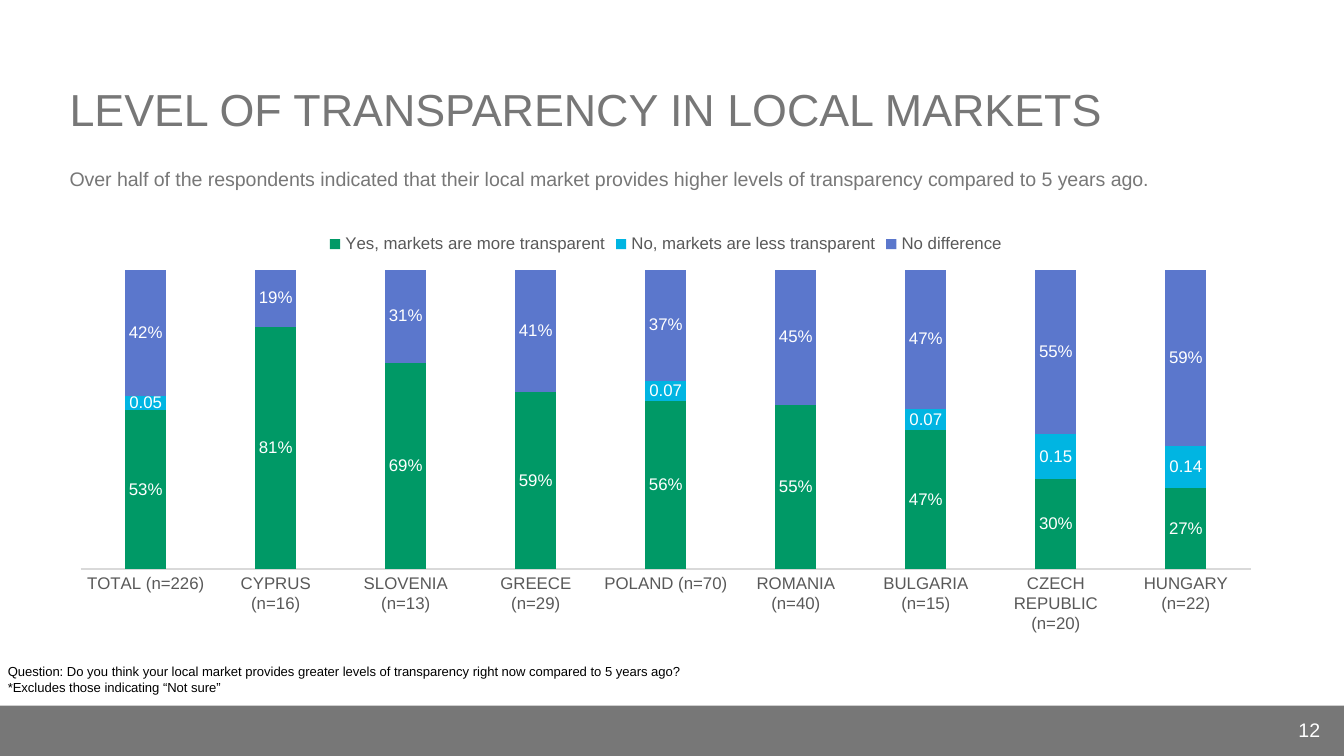
from lxml import etree
from pptx import Presentation
from pptx import util as u
from pptx.chart.data import CategoryChartData
from pptx.dml.color import RGBColor
from pptx.enum import chart as ch, shapes, text
from pptx.oxml.ns import qn

Pt = u.Pt
FONT = "Arial"
COLORS = {"gray": "777777", "white": "FFFFFF", "black": "000000", "label": "595959",
          "axis": "D9D9D9", "green": "009966", "cyan": "00B5E2", "blue": "5B77CC"}

TITLE = "LEVEL OF TRANSPARENCY IN LOCAL MARKETS"
FINDING = ("Over half of the respondents indicated that their local market provides "
           "higher levels of transparency compared to 5 years ago.")
NOTES = ["Question: Do you think your local market provides greater levels of "
         "transparency right now compared to 5 years ago?",
         "*Excludes those indicating “Not sure”"]
PAGE = "12"
MARKETS = ["TOTAL (n=226)", "CYPRUS (n=16)", "SLOVENIA (n=13)", "GREECE (n=29)",
           "POLAND (n=70)", "ROMANIA (n=40)", "BULGARIA (n=15)",
           "CZECH REPUBLIC (n=20)", "HUNGARY (n=22)"]
# name, color, label format, values
ANSWERS = [
    ("Yes, markets are more transparent", "green", "0%",
     [0.53, 0.81, 0.69, 0.59, 0.56, 0.55, 0.47, 0.3, 0.27]),
    ("No, markets are less transparent", "cyan", "General",
     [0.05, None, None, None, 0.07, None, 0.07, 0.15, 0.14]),
    ("No difference", "blue", "0%",
     [0.42, 0.19, 0.31, 0.41, 0.37, 0.45, 0.47, 0.55, 0.59]),
]
PLOT_LAYOUT = {"x": 0.02, "y": 0.12, "w": 0.96, "h": 0.71}  # fractions of the chart

SLIDE_W, SLIDE_H = 720, 405
BAR_H = 27
LEFT = 30.2


def rgb(name):
    return RGBColor.from_string(COLORS[name])


def set_font(font, size, color):
    font.name, font.size = FONT, Pt(size)
    font.color.rgb = rgb(color)


def add_text(slide, lines, box, size, color, anchor=text.MSO_ANCHOR.TOP,
             align=text.PP_ALIGN.LEFT):
    tf = slide.shapes.add_textbox(*map(Pt, box)).text_frame
    tf.word_wrap = True
    tf.vertical_anchor = anchor
    tf.text = "\n".join(lines)
    for p in tf.paragraphs:
        p.alignment = align
        for r in p.runs:
            set_font(r.font, size, color)


def fix_plot_layout(chart, fractions):
    """Pin the inner plot area to the given fractions of the chart."""
    area = chart._chartSpace.chart.plotArea
    for old in area.findall(qn("c:layout")):
        area.remove(old)
    layout = etree.Element(qn("c:layout"))
    manual = etree.SubElement(layout, qn("c:manualLayout"))
    settings = {"layoutTarget": "inner", "xMode": "edge", "yMode": "edge", **fractions}
    for tag, val in settings.items():
        etree.SubElement(manual, qn(f"c:{tag}")).set("val", str(val))
    area.insert(0, layout)


def add_answer_chart(slide, box):
    data = CategoryChartData()
    data.categories = MARKETS
    for name, _, fmt, values in ANSWERS:
        data.add_series(name, values, number_format=fmt)
    chart = slide.shapes.add_chart(ch.XL_CHART_TYPE.COLUMN_STACKED_100,
                                   *map(Pt, box), data).chart
    set_font(chart.font, 10, "black")
    chart.has_title = False
    chart.has_legend = True
    chart.legend.position = ch.XL_LEGEND_POSITION.TOP
    chart.legend.include_in_layout = False
    set_font(chart.legend.font, 9, "label")

    axis = chart.category_axis
    axis.major_tick_mark = axis.minor_tick_mark = ch.XL_TICK_MARK.NONE
    axis.format.line.color.rgb = rgb("axis")
    axis.format.line.width = Pt(0.75)
    set_font(axis.tick_labels.font, 9, "label")
    chart.value_axis.has_major_gridlines = False
    chart.value_axis.visible = False

    plot = chart.plots[0]
    plot.gap_width, plot.overlap = 219, 100
    plot.vary_by_categories = False
    for series, (_, color, fmt, _) in zip(plot.series, ANSWERS):
        series.format.fill.solid()
        series.format.fill.fore_color.rgb = rgb(color)
        labels = series.data_labels
        labels.show_value = True
        labels.number_format, labels.number_format_is_linked = fmt, False
        set_font(labels.font, 9, "white")
    fix_plot_layout(chart, PLOT_LAYOUT)


def main():
    prs = Presentation()
    prs.slide_width, prs.slide_height = Pt(SLIDE_W), Pt(SLIDE_H)
    s = prs.slides.add_slide(prs.slide_layouts[6])

    bar = s.shapes.add_shape(shapes.MSO_SHAPE.RECTANGLE, 0, Pt(SLIDE_H - BAR_H),
                             Pt(SLIDE_W), Pt(BAR_H))
    bar.shadow.inherit = False
    bar.fill.solid()
    bar.fill.fore_color.rgb = rgb("gray")
    bar.line.fill.background()

    add_text(s, [TITLE], (LEFT, 8.6, 659.6, 67.7), 24, "gray",
             anchor=text.MSO_ANCHOR.BOTTOM)
    add_text(s, [PAGE], (652.3, 380.2, 62, 21.6), 10.5, "white",
             anchor=text.MSO_ANCHOR.MIDDLE, align=text.PP_ALIGN.RIGHT)
    add_text(s, NOTES, (-2.9, 352.1, 504, 24.5), 7, "black")
    add_answer_chart(s, (LEFT, 117.4, 653, 226))
    add_text(s, [FINDING], (LEFT, 85.7, 660.2, 40.3), 10.5, "gray")
    prs.save("out.pptx")


if __name__ == "__main__":
    main()
